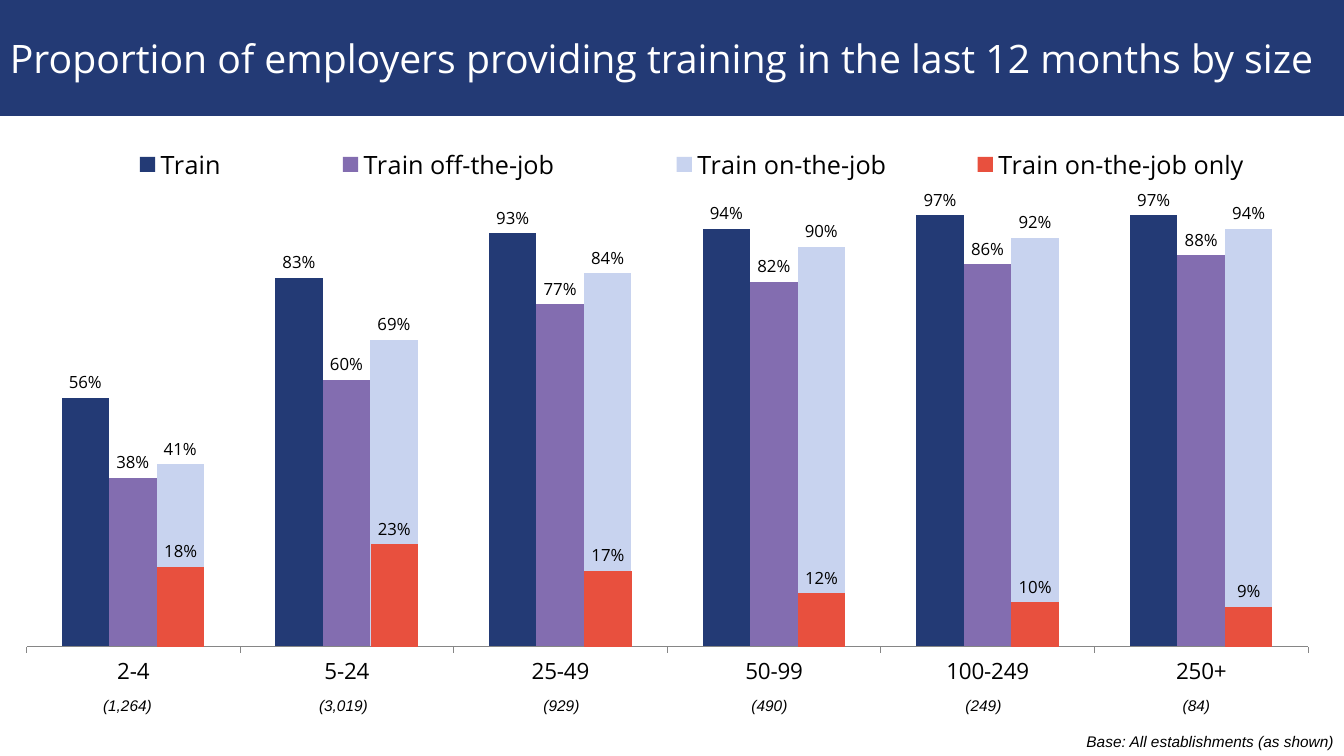
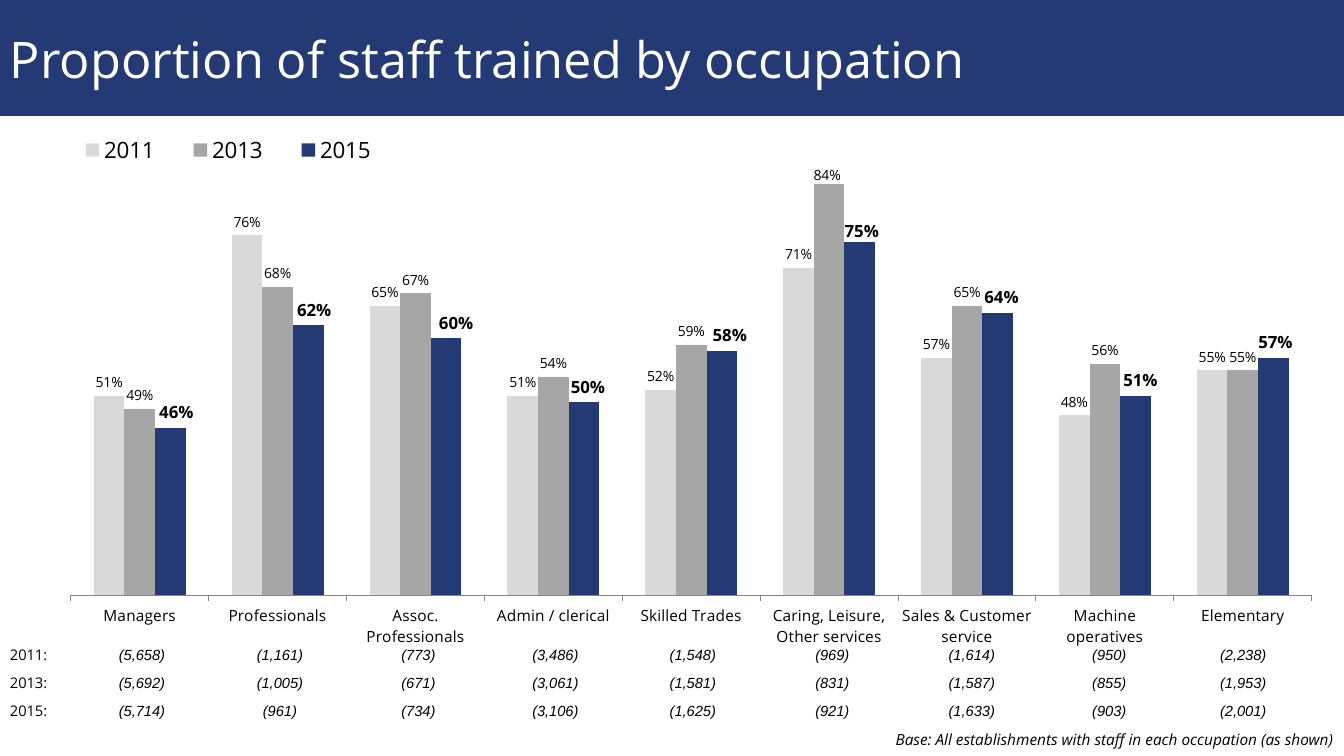
from copy import deepcopy

from pptx import Presentation
from pptx.chart.data import CategoryChartData
from pptx.dml.color import RGBColor
from pptx.enum.chart import XL_CHART_TYPE, XL_LABEL_POSITION, XL_LEGEND_POSITION, XL_TICK_MARK
from pptx.enum.shapes import MSO_SHAPE
from pptx.enum.text import MSO_ANCHOR, PP_ALIGN
from pptx.oxml import parse_xml
from pptx.oxml.ns import nsdecls
from pptx.util import Emu, Pt

COLUMNS = XL_CHART_TYPE.COLUMN_CLUSTERED
OUTSIDE_END = XL_LABEL_POSITION.OUTSIDE_END
LEGEND_RIGHT = XL_LEGEND_POSITION.RIGHT
TICK_OUT, TICK_NONE = XL_TICK_MARK.OUTSIDE, XL_TICK_MARK.NONE
RECTANGLE = MSO_SHAPE.RECTANGLE
MIDDLE, TOP = MSO_ANCHOR.MIDDLE, MSO_ANCHOR.TOP
LEFT, CENTER, RIGHT = PP_ALIGN.LEFT, PP_ALIGN.CENTER, PP_ALIGN.RIGHT
PLAIN_TABLE = "{2D5ABB26-0587-4C30-8999-92F81FD0307C}"  # no style, no grid

# Shared style
PAGE_W, PAGE_H = 1344, 756
EMU_PER_PX = 12192000 / PAGE_W
NAVY, PURPLE, PALE_BLUE, RED = "233A75", "836DB0", "C8D3EF", "E8503E"
LIGHT_GREY, MID_GREY, AXIS_GREY = "D9D9D9", "A6A6A6", "868686"
BLACK, WHITE = "000000", "FFFFFF"
SANS, ARIAL = "Open Sans", "Arial"
BAND_H = 116

# Training by employer size
SIZES = ["2-4", "5-24", "25-49", "50-99", "100-249", "250+"]
SIZE_BASES = {"(1,264)": 67, "(3,019)": 283, "(929)": 501,
              "(490)": 709, "(249)": 923, "(84)": 1136}
SIZE_SERIES = [
    ("Train", [0.56, 0.83, 0.93, 0.94, 0.97, 0.97], NAVY, 12, False),
    ("Train off-the-job", [0.38, 0.6, 0.77, 0.82, 0.86, 0.88], PURPLE, 12, False),
    ("Train on-the-job", [0.41, 0.69, 0.84, 0.9, 0.92, 0.94], PALE_BLUE, 12, False),
]
# Two empty series push the red columns over the third column of each group
ONLY_SERIES = [
    ("Series 1", [None] * 6, PALE_BLUE, 12, False),
    ("Series 2", [None] * 6, PURPLE, 12, False),
    ("Train on-the-job only", [0.18, 0.23, 0.17, 0.12, 0.1, 0.09], RED, 12, False),
]

# Training by occupation
OCCUPATIONS = ["Managers", "Professionals", "Assoc. Professionals", "Admin / clerical",
               "Skilled Trades", "Caring, Leisure, Other services",
               "Sales & Customer service", "Machine operatives", "Elementary"]
YEAR_SERIES = [
    ("2011", [0.51, 0.76, 0.65, 0.51, 0.52, 0.71, 0.57, 0.48, 0.55], LIGHT_GREY, 10, False),
    ("2013", [0.49, 0.68, 0.67, 0.54, 0.59, 0.84, 0.65, 0.56, 0.55], MID_GREY, 10, False),
    ("2015", [0.46, 0.62, 0.6, 0.5, 0.58, 0.75, 0.64, 0.51, 0.57], NAVY, 12, True),
]
# Label shifts in px: series index -> one (right, down) pair by category index
LABEL_SHIFTS = {
    1: {5: (-2, 5)},
    2: {0: (6, 0), 1: (6, 0), 2: (10, 0), 3: (4, 0), 4: (8, 0),
        5: (2, 5), 6: (4, 0), 7: (5, 0), 8: (2, 0)},
}
BASE_ROWS = [
    ["2011:", "(5,658)", "(1,161)", "(773)", "(3,486)", "(1,548)",
     "(969)", "(1,614)", "(950)", "(2,238)"],
    ["2013:", "(5,692)", "(1,005)", "(671)", "(3,061)", "(1,581)",
     "(831)", "(1,587)", "(855)", "(1,953)"],
    ["2015:", "(5,714)", "(961)", "(734)", "(3,106)", "(1,625)",
     "(921)", "(1,633)", "(903)", "(2,001)"],
]
BASE_COLUMNS = [73, 138, 138, 139, 135, 140, 139, 140, 135, 133]


def px(value):
    return Emu(round(value * EMU_PER_PX))


def color(hex_text):
    return RGBColor.from_string(hex_text)


def style_font(font, size, name=SANS, fill=BLACK, bold=False, italic=False):
    font.size, font.name, font.bold, font.italic = Pt(size), name, bold, italic
    font.color.rgb = color(fill)


def write(frame, text, size, align=LEFT, **style):
    para = frame.paragraphs[0]
    para.alignment = align
    span = para.add_run()
    span.text = text
    style_font(span.font, size, **style)


def add_title(page, text, size):
    band = page.shapes.add_shape(RECTANGLE, 0, 0, px(PAGE_W), px(BAND_H))
    band.shadow.inherit = False
    band.fill.solid()
    band.fill.fore_color.rgb = color(NAVY)
    band.line.fill.background()
    band.text_frame.word_wrap = True
    band.text_frame.vertical_anchor = MIDDLE
    write(band.text_frame, text, size, fill=WHITE)


def add_note(page, text, left, top, width, align, name=ARIAL):
    box = page.shapes.add_textbox(px(left), px(top), px(width), px(29))
    box.text_frame.word_wrap = True
    box.text_frame.vertical_anchor = TOP
    write(box.text_frame, text, 11, align, name=name, italic=True)


def manual_layout(x, y, w=None, h=None, plot=False):
    """Chart layout in fractions; without a size it is a shift."""
    parts = '<c:layoutTarget val="inner"/>' if plot else ""
    if w is not None:
        parts += '<c:xMode val="edge"/><c:yMode val="edge"/>'
    for tag, value in zip("xywh", (x, y, w, h)):
        if value is not None:
            parts += f'<c:{tag} val="{value:.4f}"/>'
    return parse_xml(f'<c:layout {nsdecls("c")}><c:manualLayout>{parts}'
                     '</c:manualLayout></c:layout>')


def place_plot(chart, plot_box):
    area = chart.element.xpath("c:chart/c:plotArea")[0]
    for old in area.xpath("c:layout"):
        area.remove(old)
    area.insert(0, manual_layout(*plot_box, plot=True))


def add_legend(chart, legend_box, size, hidden):
    chart.has_legend = True
    chart.legend.position = LEGEND_RIGHT
    chart.legend.include_in_layout = False
    style_font(chart.legend.font, size)
    legend = chart.element.xpath("c:chart/c:legend")[0]
    for old in legend.xpath("c:layout"):
        legend.remove(old)
    overlay = legend.xpath("c:overlay")[0]
    for index in hidden:
        overlay.addprevious(parse_xml(
            f'<c:legendEntry {nsdecls("c")}><c:idx val="{index}"/>'
            '<c:delete val="1"/></c:legendEntry>'))
    overlay.addprevious(manual_layout(*legend_box))


def shift_labels(chart, series_index, shifts, width, height):
    labels = chart.element.xpath(f".//c:ser[c:idx/@val='{series_index}']/c:dLbls")[0]
    shared = labels.xpath("*[not(self::c:showLeaderLines)]")
    for position, (index, (right, down)) in enumerate(shifts.items()):
        label = parse_xml(f'<c:dLbl {nsdecls("c")}><c:idx val="{index}"/></c:dLbl>')
        label.append(manual_layout(right / width, down / height))
        for part in shared:
            label.append(deepcopy(part))
        labels.insert(position, label)


def style_axes(chart, axis_size, low, high):
    value_axis, category_axis = chart.value_axis, chart.category_axis
    value_axis.minimum_scale, value_axis.maximum_scale = low, high
    value_axis.has_major_gridlines = False
    value_axis.visible = False
    category_axis.has_major_gridlines = False
    if axis_size is None:
        category_axis.visible = False
        return
    category_axis.major_tick_mark = TICK_OUT
    category_axis.minor_tick_mark = TICK_NONE
    category_axis.format.line.color.rgb = color(AXIS_GREY)
    category_axis.format.line.width = Pt(0.75)
    style_font(category_axis.tick_labels.font, axis_size)


def add_columns(page, frame, categories, series_rows, plot_box, legend_box,
                legend_size=18, axis_size=None, low=0, high=1, hidden=(), shifts=None):
    data = CategoryChartData(number_format="0%")
    data.categories = categories
    for name, values, *_ in series_rows:
        data.add_series(name, values)
    chart = page.shapes.add_chart(COLUMNS, *map(px, frame), data).chart
    chart.has_title = False
    style_font(chart.font, 18)
    chart.element.xpath("c:chart")[0].addnext(parse_xml(
        f'<c:spPr {nsdecls("c", "a")}><a:noFill/><a:ln><a:noFill/></a:ln></c:spPr>'))
    style_axes(chart, axis_size, low, high)
    plot = chart.plots[0]
    plot.vary_by_categories = False
    plot.gap_width, plot.overlap = 150, 0
    for series, (_, _, fill, size, bold) in zip(plot.series, series_rows):
        series.format.fill.solid()
        series.format.fill.fore_color.rgb = color(fill)
        series.invert_if_negative = False
        labels = series.data_labels
        labels.show_value = True
        labels.number_format, labels.number_format_is_linked = "0%", False
        labels.position = OUTSIDE_END
        style_font(labels.font, size, bold=bold)
    for index, moves in (shifts or {}).items():
        shift_labels(chart, index, moves, *frame[2:])
    place_plot(chart, plot_box)
    add_legend(chart, legend_box, legend_size, hidden)


def add_base_table(page, left, top, row_height):
    holder = page.shapes.add_table(
        len(BASE_ROWS), len(BASE_COLUMNS), px(left), px(top),
        px(sum(BASE_COLUMNS)), px(row_height * len(BASE_ROWS)))
    holder.element.xpath(".//a:tableStyleId")[0].text = PLAIN_TABLE
    table = holder.table
    table.first_row = table.horz_banding = False
    for column, width in zip(table.columns, BASE_COLUMNS):
        column.width = px(width)
    for row, texts in zip(table.rows, BASE_ROWS):
        row.height = px(row_height)
        for index, (cell, text) in enumerate(zip(row.cells, texts)):
            heading = index == 0
            cell.fill.background()
            cell.vertical_anchor = MIDDLE
            cell.margin_top = cell.margin_bottom = 0
            cell.margin_left = cell.margin_right = px(10 if heading else 1)
            write(cell.text_frame, text, 10.5, LEFT if heading else CENTER,
                  name=SANS if heading else ARIAL, italic=not heading)


def build_size_page(page):
    frame = (26, 57, 1344, 698)
    plot_box = (0, 0.208, 0.954, 0.637)
    add_columns(page, frame, SIZES, SIZE_SERIES, plot_box, (0, 0.124, 0.725, 0.06))
    add_columns(page, frame, SIZES, ONLY_SERIES, plot_box, (0.682, 0.124, 0.25, 0.06),
                axis_size=16, hidden=(0, 1))
    add_title(page, "Proportion of employers providing training in the last 12 months by size", 28)
    for text, left in SIZE_BASES.items():
        add_note(page, text, left, 691, 121, CENTER)
    add_note(page, "Base: All establishments (as shown)", 923, 727, 421, RIGHT)


def build_occupation_page(page):
    add_title(page, "Proportion of staff trained by occupation", 36)
    # The table lies behind the chart so that two-line category labels stay whole
    add_base_table(page, 0, 641, 28)
    add_columns(page, (54, 105, 1290, 563), OCCUPATIONS, YEAR_SERIES,
                (0.013, 0.072, 0.962, 0.799), (0, 0.04, 0.27, 0.08),
                legend_size=16, axis_size=11, low=0.2, high=0.9, shifts=LABEL_SHIFTS)
    add_note(page, "Base: All establishments with staff in each occupation (as shown)",
             335, 725, 1009, RIGHT, name=SANS)


def main():
    deck = Presentation()
    deck.slide_width, deck.slide_height = px(PAGE_W), px(PAGE_H)
    for build in (build_size_page, build_occupation_page):
        build(deck.slides.add_slide(deck.slide_layouts[6]))
    deck.save("out.pptx")


if __name__ == "__main__":
    main()
